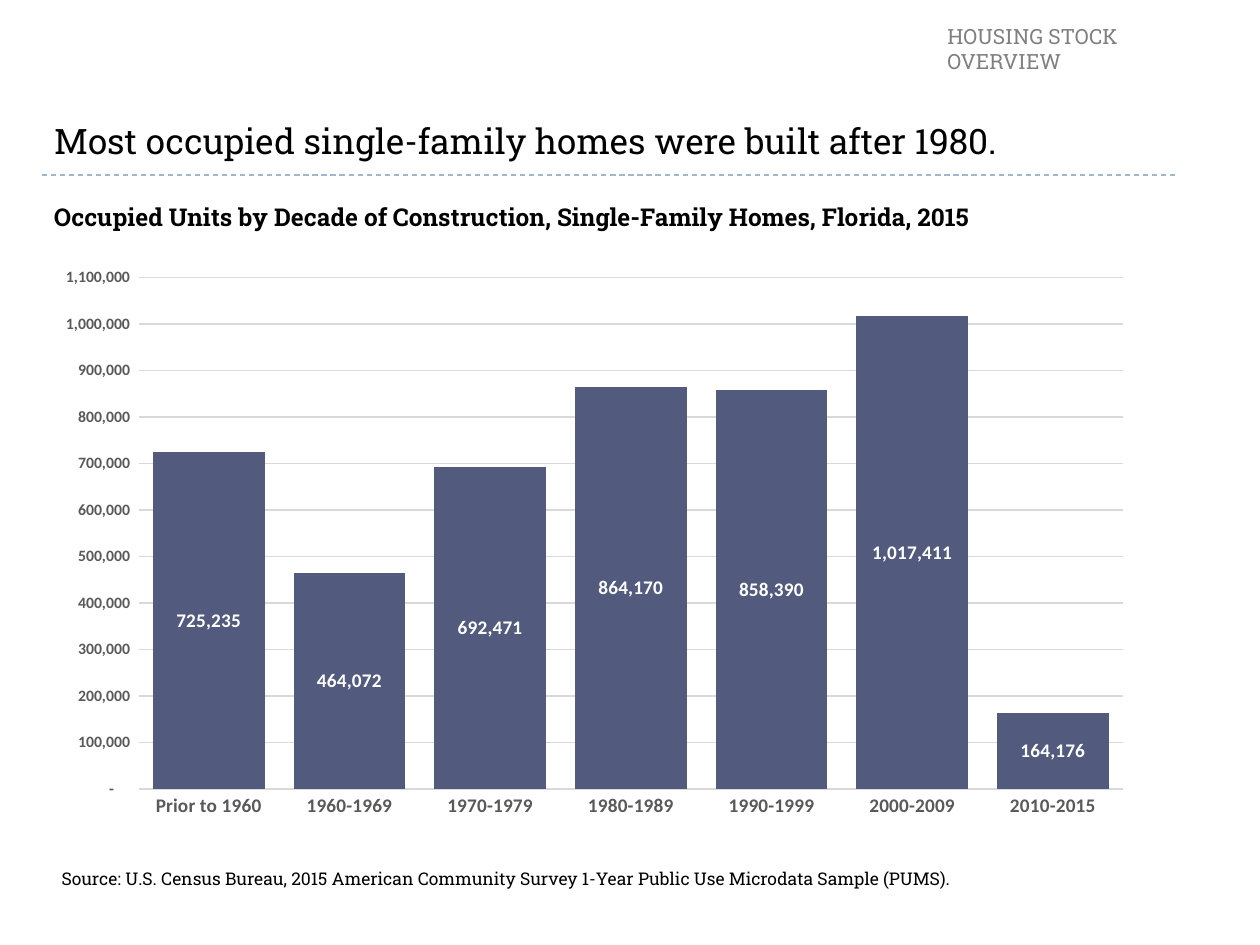
from lxml import etree
from pptx import Presentation
from pptx.chart.data import CategoryChartData
from pptx.dml.color import RGBColor
from pptx.enum.chart import XL_CHART_TYPE, XL_LABEL_POSITION, XL_TICK_MARK
from pptx.enum.dml import MSO_LINE
from pptx.enum.shapes import MSO_CONNECTOR
from pptx.enum.text import MSO_ANCHOR, MSO_AUTO_SIZE, PP_ALIGN
from pptx.oxml.ns import qn
from pptx.util import Inches, Pt

COLUMN = XL_CHART_TYPE.COLUMN_CLUSTERED
CENTER = XL_LABEL_POSITION.CENTER
NO_TICK = XL_TICK_MARK.NONE
DASH = MSO_LINE.DASH
STRAIGHT = MSO_CONNECTOR.STRAIGHT
BOTTOM = MSO_ANCHOR.BOTTOM
LEFT = PP_ALIGN.LEFT
GROW = MSO_AUTO_SIZE.SHAPE_TO_FIT_TEXT
SLAB, SANS = "Roboto Slab", "Calibri"
COLORS = {"text": "000000", "header": "808080", "rule": "9FB8CD", "bar": "525B7E",
          "axis": "595959", "grid": "D9D9D9", "label": "FFFFFF"}
NUMBER_FORMAT = r'_(* #,##0_);_(* \(#,##0\);_(* "-"??_);_('
UNITS = {"Prior to 1960": 725235, "1960-1969": 464072, "1970-1979": 692471,
         "1980-1989": 864170, "1990-1999": 858390, "2000-2009": 1017411,
         "2010-2015": 164176}


def set_font(font, name, size, color, bold=False):
    for key, value in {"name": name, "size": Pt(size), "bold": bold}.items():
        setattr(font, key, value)
    font.color.rgb = RGBColor.from_string(COLORS[color])


def set_line(line, color):
    line.color.rgb = RGBColor.from_string(COLORS[color])
    line.width = Pt(0.75)


prs = Presentation()
prs.slide_width, prs.slide_height = Inches(10), Inches(7.5)
s = prs.slides.add_slide(prs.slide_layouts[5])

# Title and the dashed rule below it
rule = s.shapes.add_connector(STRAIGHT, Inches(0.33), Inches(1.39), Inches(9.33), Inches(1.39))
set_line(rule.line, "rule")
rule.line.dash_style = DASH
etree.SubElement(rule._element.spPr, qn("a:effectLst"))

title = s.shapes.title
title.left, title.top, title.width, title.height = map(Inches, (0.33, 0.66, 9.25, 0.67))
tf = title.text_frame
tf.text = "Most occupied single-family homes were built after 1980."
tf.vertical_anchor = BOTTOM
tf.paragraphs[0].alignment = LEFT
set_font(tf.paragraphs[0].runs[0].font, SLAB, 20, "text")

# Text boxes: text, box, size, colour, bold, right margin, paragraph format
texts = [
    ("Occupied Units by Decade of Construction, Single-Family Homes, Florida, 2015",
     (0.33, 1.54, 8.75, 0.35), 14, "text", True, 0.1,
     {"line_spacing": 1.07, "space_after": Pt(8)}),
    ("HOUSING STOCK OVERVIEW", (7.42, 0.14, 2.49, 0.3), 12, "header", False, 0.8, {}),
    ("Source: U.S. Census Bureau, 2015 American Community Survey 1-Year Public Use "
     "Microdata Sample (PUMS).", (0.39, 6.84, 9.11, 0.27), 10, "text", False, 0.1, {}),
]
for text, box, size, color, bold, margin, layout in texts:
    tf = s.shapes.add_textbox(*map(Inches, box)).text_frame
    tf.word_wrap = True
    tf.auto_size = GROW
    tf.margin_right = Inches(margin)
    p = tf.paragraphs[0]
    for key, value in layout.items():
        setattr(p, key, value)
    r = p.add_run()
    r.text = text
    set_font(r.font, SLAB, size, color, bold)

# Column chart
data = CategoryChartData()
data.categories = list(UNITS)
data.add_series("Series 1", list(UNITS.values()))
chart = s.shapes.add_chart(COLUMN, *map(Inches, (0.32, 2.04, 8.77, 4.54)), data).chart
chart.has_legend = chart.has_title = False
set_font(chart.font, SANS, 10, "text")

plot = chart.plots[0]
plot.gap_width, plot.overlap, plot.vary_by_categories = 26, -27, False
bars = plot.series[0]
bars.format.fill.solid()
bars.format.fill.fore_color.rgb = RGBColor.from_string(COLORS["bar"])

labels = bars.data_labels
labels.show_value = True
labels.position = CENTER
set_font(labels.font, SANS, 11, "label", True)

cats, vals = chart.category_axis, chart.value_axis
for axis, size in ((cats, 11), (vals, 9)):
    axis.major_tick_mark = axis.minor_tick_mark = NO_TICK
    set_font(axis.tick_labels.font, SANS, size, "axis", True)
set_line(cats.format.line, "grid")
vals.format.line.fill.background()
set_line(vals.major_gridlines.format.line, "grid")
vals.minimum_scale, vals.maximum_scale, vals.major_unit = 0, 1100000, 100000
for numbers in (labels, vals.tick_labels):
    numbers.number_format = NUMBER_FORMAT
    numbers.number_format_is_linked = False

prs.save("out.pptx")
